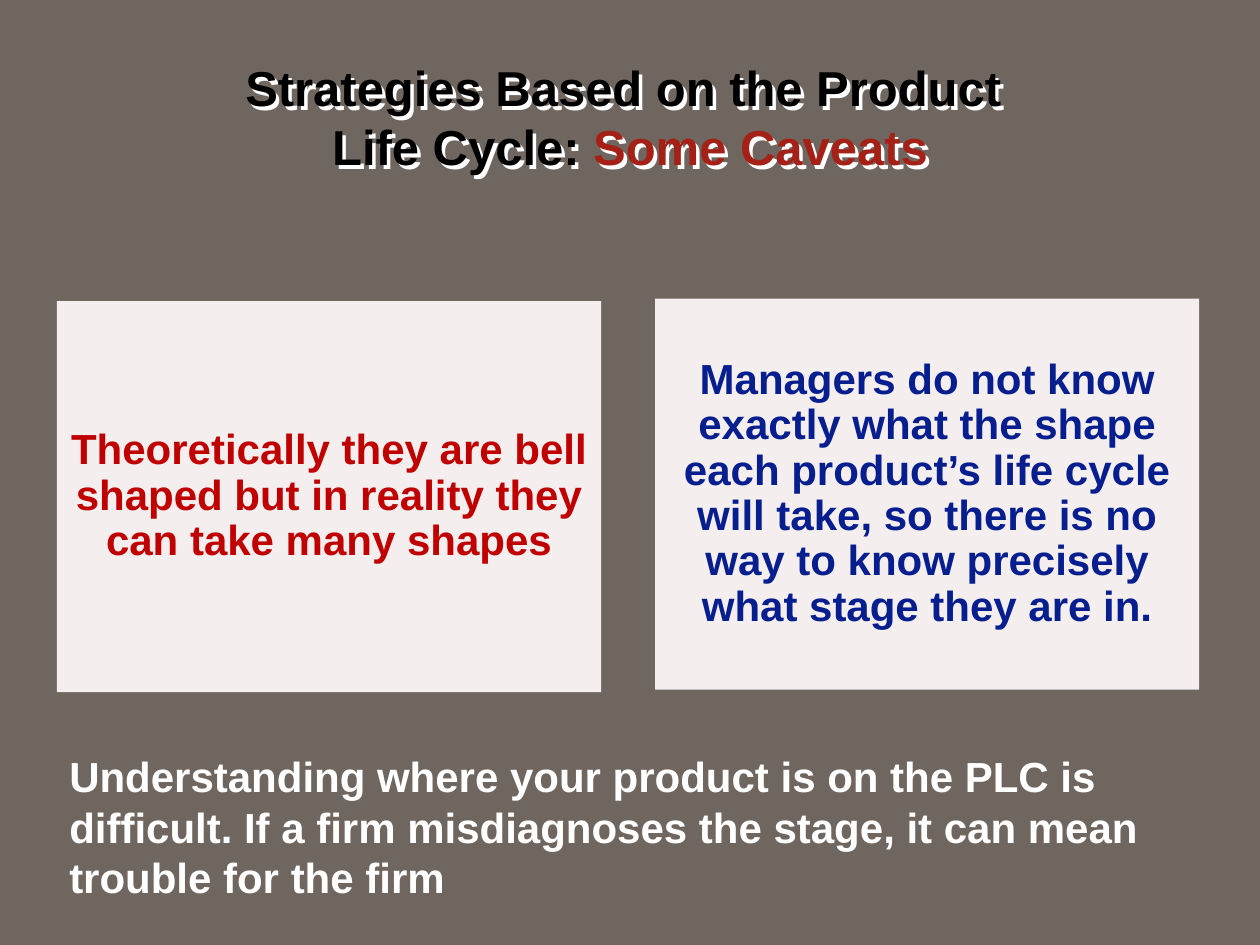
import pptx
import pptx.dml.color
import pptx.enum.shapes
import pptx.enum.text
import pptx.oxml
import pptx.oxml.ns
import pptx.util

Pt = pptx.util.Pt
RGBColor = pptx.dml.color.RGBColor
ALIGN = pptx.enum.text.PP_ALIGN
ANCHOR = pptx.enum.text.MSO_ANCHOR

TAUPE = RGBColor(0x70, 0x66, 0x60)
PALE = RGBColor(0xF4, 0xEE, 0xEE)
BLACK = RGBColor(0, 0, 0)
BRICK = RGBColor(0xA5, 0x21, 0x17)
RED = RGBColor(0xC0, 0, 0)
NAVY = RGBColor(0x07, 0x1E, 0x8F)
WHITE = RGBColor(0xFF, 0xFF, 0xFF)

TITLE_SHADOW = (
    f'<a:effectLst {pptx.oxml.ns.nsdecls("a")}>'
    '<a:outerShdw dist="35921" dir="2700000" algn="ctr" rotWithShape="0">'
    f'<a:srgbClr val="{WHITE}"/></a:outerShdw></a:effectLst>'
)


class CaveatSlide:
    """Holds the text style and the slide being filled."""

    font_format = {"name": "Arial", "bold": True}

    def __init__(self, deck):
        self.slide = deck.slides.add_slide(deck.slide_layouts[5])
        background = self.slide.background.fill
        background.solid()
        background.fore_color.rgb = TAUPE

    def style(self, font, size, color):
        for name, value in {**self.font_format, "size": Pt(size)}.items():
            setattr(font, name, value)
        font.color.rgb = color

    def title(self, box, lines, highlight):
        heading = self.slide.shapes.title
        for name, value in zip(("left", "top", "width", "height"), box):
            setattr(heading, name, Pt(value))
        frame = heading.text_frame
        frame.vertical_anchor = ANCHOR.MIDDLE
        paragraph = frame.paragraphs[0]
        paragraph.alignment = ALIGN.CENTER
        first, second = lines
        for words, color in ((first, BLACK), (second, BLACK), (highlight, BRICK)):
            run = paragraph.add_run()
            run.text = words
            self.style(run.font, 28, color)
            if words == first:
                paragraph.add_line_break()
        heading.fill.background()
        heading._element.spPr.append(pptx.oxml.parse_xml(TITLE_SHADOW))

    def card(self, box, words, color):
        card = self.slide.shapes.add_shape(
            pptx.enum.shapes.MSO_SHAPE.RECTANGLE, *map(Pt, box))
        card.shadow.inherit = False
        card.fill.solid()
        card.fill.fore_color.rgb = PALE
        card.line.fill.background()
        frame = card.text_frame
        frame.vertical_anchor = ANCHOR.MIDDLE
        for side in ("left", "top", "right", "bottom"):
            setattr(frame, f"margin_{side}", Pt(7.2))
        paragraph = self.body_text(frame, words, color)
        paragraph.alignment = ALIGN.CENTER
        paragraph.line_spacing = 0.9

    def note(self, box, words):
        frame = self.slide.shapes.add_textbox(*map(Pt, box)).text_frame
        self.body_text(frame, words, WHITE)
        frame.auto_size = pptx.enum.text.MSO_AUTO_SIZE.SHAPE_TO_FIT_TEXT

    def body_text(self, frame, words, color):
        frame.word_wrap = True
        paragraph = frame.paragraphs[0]
        run = paragraph.add_run()
        run.text = words
        self.style(run.font, 24, color)
        return paragraph


def main():
    deck = pptx.Presentation()
    deck.slide_width, deck.slide_height = Pt(720), Pt(540)
    caveats = CaveatSlide(deck)

    # Heading
    caveats.title((36, 21.6, 648, 90),
                  ("Strategies Based on the Product ", "Life Cycle: "),
                  "Some Caveats")

    # Two caveats side by side
    card_size = (311, 223.5)
    caveats.card((32.5, 172, *card_size),
                 "Theoretically they are bell shaped but in reality they can "
                 "take many shapes", RED)
    caveats.card((374.3, 170.6, *card_size),
                 "Managers do not know exactly what the shape each product’s "
                 "life cycle will take, so there is no way to know precisely "
                 "what stage they are in.", NAVY)

    # Conclusion
    caveats.note((32.5, 425.5, 659, 94.3),
                 "Understanding where your product is on the PLC is difficult. "
                 "If a firm misdiagnoses the stage, it can mean trouble for "
                 "the firm")

    deck.save("out.pptx")


if __name__ == "__main__":
    main()
